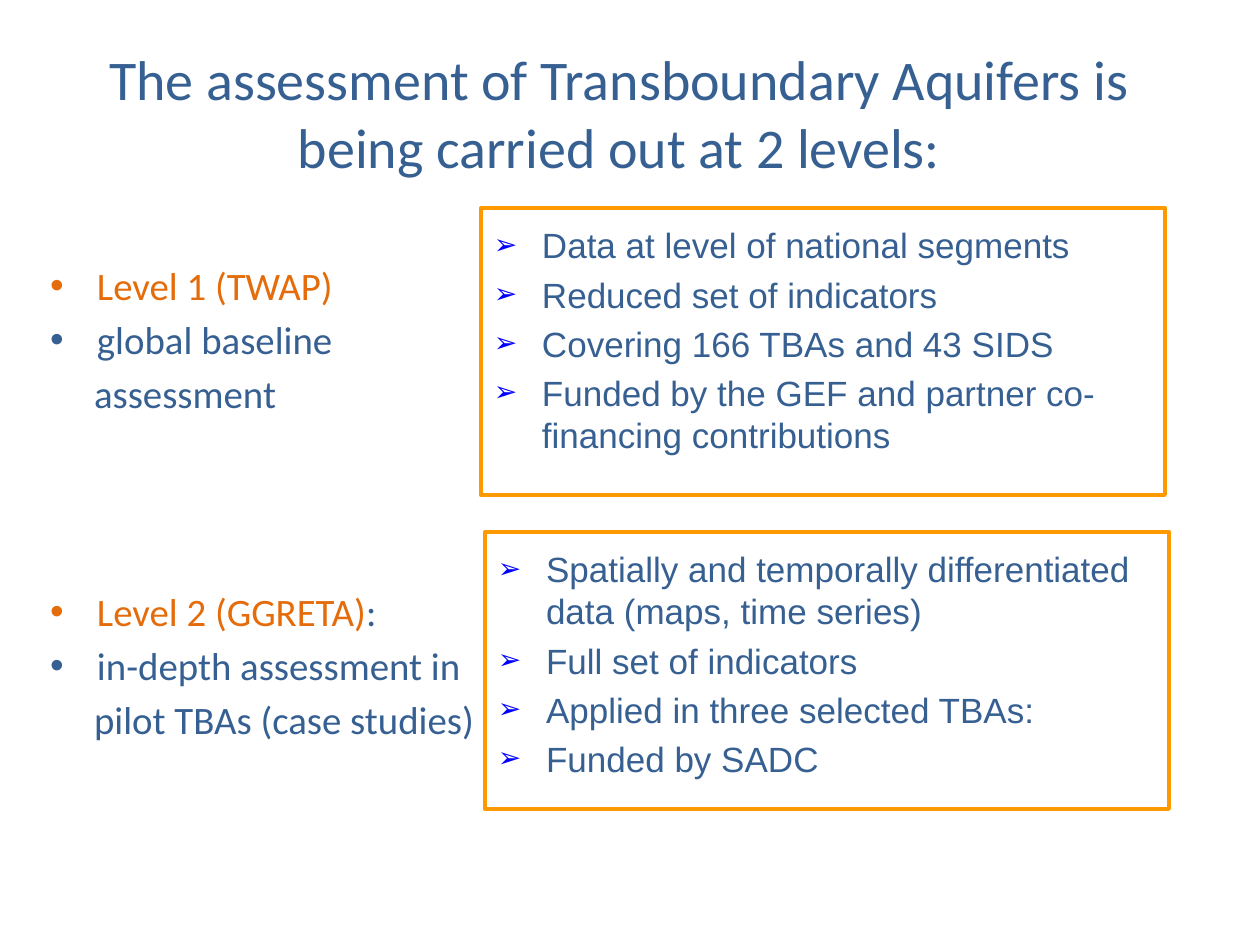
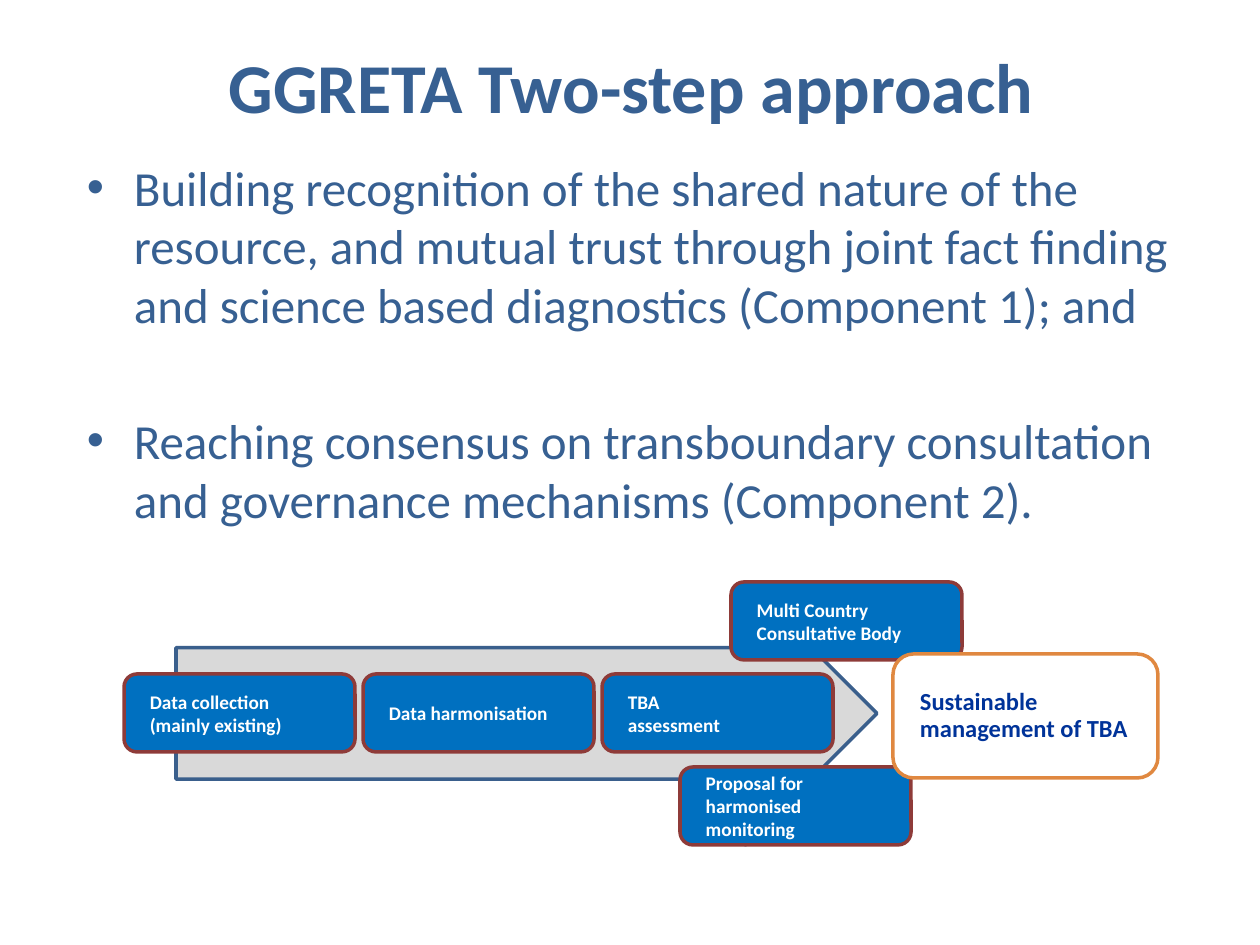
from lxml import etree
from pptx import Presentation
from pptx import util as u
from pptx.dml.color import RGBColor
from pptx.enum import shapes, text
from pptx.oxml import ns

PX = 914400 / 126
SLIDE_W, SLIDE_H = 1260, 945

WHITE = RGBColor(0xFF, 0xFF, 0xFF)
STEEL = RGBColor(0x37, 0x60, 0x92)
ORANGE = RGBColor(0xE4, 0x6C, 0x0A)
AMBER = RGBColor(0xFF, 0x99, 0x00)
BLUE = RGBColor(0x00, 0x00, 0xFF)
GREY = RGBColor(0xD9, 0xD9, 0xD9)
ARROW_EDGE = RGBColor(0x3A, 0x5F, 0x8C)
STEP_FILL = RGBColor(0x00, 0x70, 0xC0)
STEP_EDGE = RGBColor(0x8E, 0x3B, 0x39)
OUTCOME_EDGE = RGBColor(0xE0, 0x88, 0x40)
NAVY = RGBColor(0x00, 0x33, 0x99)

LEVELS = [
    ([[("Level 1 (TWAP)", ORANGE)], [("global baseline", STEEL)]],
     "assessment",
     ["Data at level of national segments",
      "Reduced set of indicators",
      "Covering 166 TBAs and 43 SIDS",
      "Funded by the GEF and partner co-financing contributions"]),
    ([[("Level 2 (GGRETA)", ORANGE), (":", STEEL)],
      [("in-depth assessment in", STEEL)]],
     "pilot TBAs (case studies)",
     ["Spatially and temporally differentiated data (maps, time series)",
      "Full set of indicators",
      "Applied in three selected TBAs:",
      "Funded by SADC"]),
]
COMPONENTS = [
    "Building recognition of the shared nature of the resource, and mutual trust "
    "through joint fact finding and science based diagnostics (Component 1); and",
    "Reaching consensus on transboundary consultation and governance mechanisms "
    "(Component 2).",
]
DATA_STEPS = [["Data collection", "(mainly existing)"],
              ["Data harmonisation"],
              ["TBA", "assessment"]]


def px(length):
    return round(length * PX)


def emu(box):
    return [px(length) for length in box]


def prepare_frame(shape, margins=(13, 6, 13, 6), anchor=text.MSO_ANCHOR.TOP):
    frame = shape.text_frame
    frame.word_wrap = True
    frame.vertical_anchor = anchor
    (frame.margin_left, frame.margin_top,
     frame.margin_right, frame.margin_bottom) = emu(margins)
    return frame


def add_text_area(slide, box, **options):
    return prepare_frame(slide.shapes.add_textbox(*emu(box)), **options)


def add_outlined(slide, preset, box, fill, edge, width):
    shape = slide.shapes.add_shape(preset, *emu(box))
    shape.shadow.inherit = False
    if fill is None:
        shape.fill.background()
    else:
        shape.fill.solid()
        shape.fill.fore_color.rgb = fill
    shape.line.color.rgb = edge
    shape.line.width = u.Pt(width)
    return shape


def next_paragraph(frame, space_before=0):
    first = frame.paragraphs[0]
    if not first.runs:
        return first
    paragraph = frame.add_paragraph()
    paragraph.space_before = u.Pt(space_before)
    return paragraph


def add_run(paragraph, words, size, color, bold=False, font="Calibri"):
    run = paragraph.add_run()
    run.text = words
    run.font.name = font
    run.font.size = u.Pt(size)
    run.font.bold = bold
    run.font.color.rgb = color


def set_bullet(paragraph, char="•", indent=47, color=None, percent=100):
    props = paragraph._p.get_or_add_pPr()
    props.set("marL", str(px(indent)))
    props.set("indent", str(-px(indent)))
    if color is not None:
        holder = etree.SubElement(props, ns.qn("a:buClr"))
        etree.SubElement(holder, ns.qn("a:srgbClr")).set("val", str(color))
    etree.SubElement(props, ns.qn("a:buSzPct")).set("val", str(percent * 1000))
    etree.SubElement(props, ns.qn("a:buFont")).set("typeface", "Arial")
    etree.SubElement(props, ns.qn("a:buChar")).set("char", char)


def add_title(slide, box, words, size, bold=False, anchor=text.MSO_ANCHOR.TOP):
    title = add_text_area(slide, box, anchor=anchor).paragraphs[0]
    title.alignment = text.PP_ALIGN.CENTER
    add_run(title, words, size, STEEL, bold)


def add_level_summary(slide, box, headings, continuation):
    frame = add_text_area(slide, box)
    for heading in headings:
        paragraph = next_paragraph(frame, 4)
        set_bullet(paragraph)
        for words, color in heading:
            add_run(paragraph, words, 22.2, color)
    paragraph = next_paragraph(frame, 4)
    paragraph._p.get_or_add_pPr().set("marL", str(px(44)))
    add_run(paragraph, continuation, 22.2, STEEL)


def add_level_details(slide, box, details):
    panel = add_outlined(slide, shapes.MSO_SHAPE.RECTANGLE, box, None, AMBER, 2.25)
    frame = prepare_frame(panel, margins=(13, 16, 13, 6))
    for detail in details:
        paragraph = next_paragraph(frame, 4)
        paragraph.alignment = text.PP_ALIGN.LEFT
        paragraph.line_spacing = u.Pt(24)
        set_bullet(paragraph, "➢", 48, BLUE, 80)
        add_run(paragraph, detail, 20, STEEL, font="Arial")


def add_components(slide, box):
    frame = add_text_area(slide, box)
    for component in COMPONENTS:
        paragraph = next_paragraph(frame, 44)
        set_bullet(paragraph)
        add_run(paragraph, component, 28, STEEL)


def add_step(slide, box, lines):
    step = add_outlined(slide, shapes.MSO_SHAPE.ROUNDED_RECTANGLE, box,
                        STEP_FILL, STEP_EDGE, 2)
    frame = prepare_frame(step, (22, 9, 18, 9), text.MSO_ANCHOR.MIDDLE)
    paragraph = frame.paragraphs[0]
    paragraph.alignment = text.PP_ALIGN.LEFT
    for number, line in enumerate(lines):
        if number:
            paragraph.add_line_break()
        add_run(paragraph, line, 11, WHITE, True)


def add_outcome(slide, box):
    outcome = add_outlined(slide, shapes.MSO_SHAPE.ROUNDED_RECTANGLE, box,
                           WHITE, OUTCOME_EDGE, 2)
    frame = prepare_frame(outcome, (21, 8, 21, 8), text.MSO_ANCHOR.MIDDLE)
    paragraph = frame.paragraphs[0]
    paragraph.alignment = text.PP_ALIGN.LEFT
    paragraph.line_spacing = 0.9
    add_run(paragraph, "Sustainable management of TBA", 14, NAVY, True)


def add_process(slide, box):
    left, top, width, height = box
    step_w, step_h, pitch = 231, 78, 239
    add_outlined(slide, shapes.MSO_SHAPE.RIGHT_ARROW,
                 (left + 52, top, 701, height), GREY, ARROW_EDGE, 2)
    for number, lines in enumerate(DATA_STEPS):
        add_step(slide, (left + number * pitch, top + 92, step_w, step_h), lines)
    add_step(slide, (left + 556, top + height - step_h, step_w, step_h),
             ["Proposal for harmonised monitoring"])
    add_step(slide, (left + 607, top, step_w, step_h),
             ["Multi Country", "Consultative Body"])
    outcome_w = 265
    add_outcome(slide, (left + width - outcome_w, top + 72, outcome_w, 124))


def build_levels_slide(slide):
    add_title(slide, (34, 39, 1171, 149),
              "The assessment of Transboundary Aquifers is "
              "being carried out at 2 levels:", 32)
    summary_tops = (256, 582)
    detail_boxes = ((481, 208, 684, 287), (485, 532, 684, 277))
    for level, top, detail_box in zip(LEVELS, summary_tops, detail_boxes):
        headings, continuation, details = level
        add_level_summary(slide, (37, top, 625, 175), headings, continuation)
        add_level_details(slide, detail_box, details)


def build_approach_slide(slide):
    add_title(slide, (64, 16, 1134, 138), "GGRETA Two-step approach", 40, True,
              text.MSO_ANCHOR.MIDDLE)
    add_components(slide, (74, 151, 1134, 400))
    add_process(slide, (124, 582, 1034, 263))


def main():
    deck = Presentation()
    deck.slide_width, deck.slide_height = emu((SLIDE_W, SLIDE_H))
    blank = deck.slide_layouts[6]
    for build in (build_levels_slide, build_approach_slide):
        build(deck.slides.add_slide(blank))
    deck.save("out.pptx")


if __name__ == "__main__":
    main()
